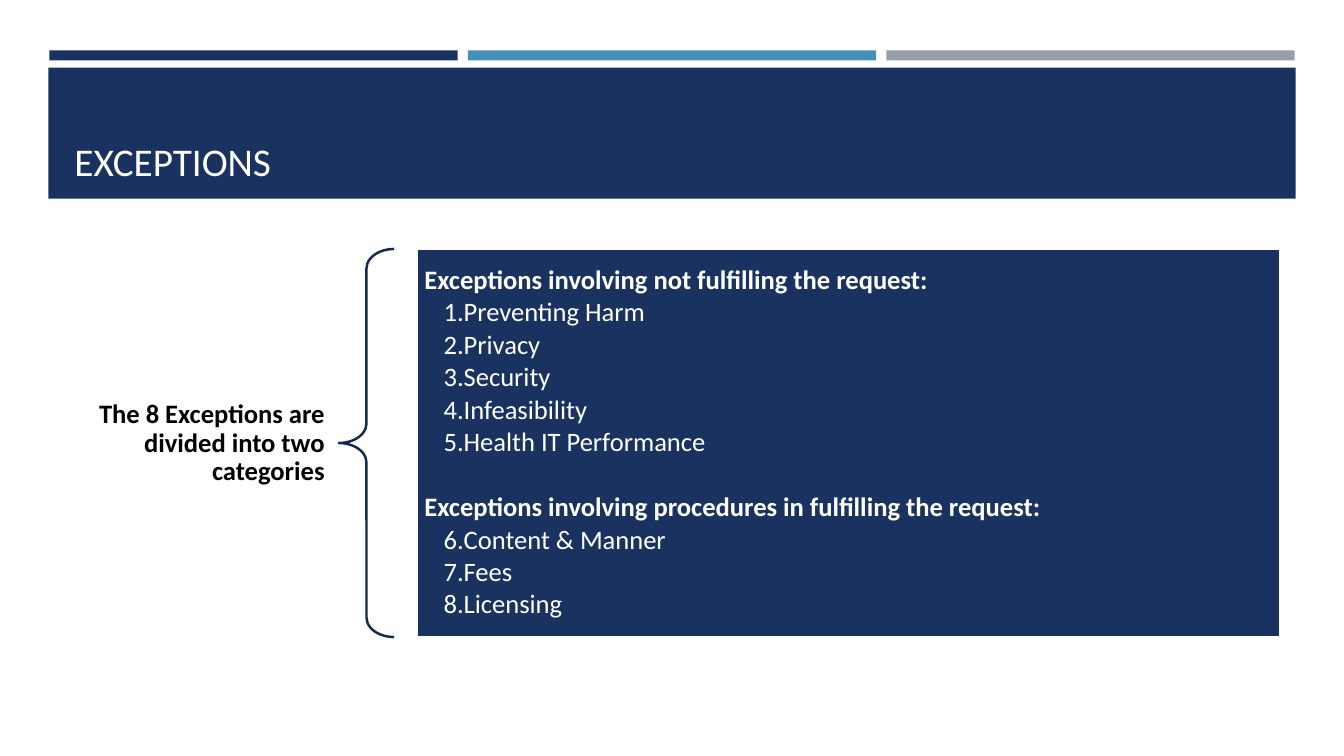
from lxml.etree import SubElement
from pptx import Presentation
from pptx.dml.color import RGBColor
from pptx.enum.shapes import MSO_SHAPE as Shape
from pptx.enum.text import MSO_ANCHOR as Anchor, PP_ALIGN as Align
from pptx.oxml.ns import qn
from pptx.util import Inches, Pt

NAVY, WHITE = "1A3260", "FFFFFF"
TITLE = "EXCEPTIONS"
LABEL = "The 8 Exceptions are divided into two categories"
GROUPS = [
    ("Exceptions involving not fulfilling the request:",
     ["Preventing Harm", "Privacy", "Security", "Infeasibility",
      "Health IT Performance"]),
    ("Exceptions involving procedures in fulfilling the request:",
     ["Content & Manner", "Fees", "Licensing"]),
]
BARS = [NAVY, "4590B8", "969FA7"]
TOP, HIGH = 2.47, 3.85

deck = Presentation()
deck.slide_width, deck.slide_height = Inches(13.33), Inches(7.5)
slide = deck.slides.add_slide(deck.slide_layouts[6])


def paint(hue):
    return RGBColor.from_string(hue)


def draw(kind, box, fill=None, line=None):
    shape = slide.shapes.add_shape(kind, *map(Inches, box))
    shape.shadow.inherit = False
    if fill:
        shape.fill.solid()
        shape.fill.fore_color.rgb = paint(fill)
    else:
        shape.fill.background()
    if line:
        shape.line.color.rgb = paint(line)
        shape.line.width = Pt(1.75)
    else:
        shape.line.fill.background()
    return shape


def setup(shape, anchor, side, edge):
    frame = shape.text_frame
    frame.word_wrap = True
    frame.vertical_anchor = anchor
    frame.margin_left = frame.margin_right = Inches(side)
    frame.margin_top = frame.margin_bottom = Inches(edge)
    return frame


def write(para, text, size, hue, bold=False, align=Align.LEFT):
    para.text = text
    para.alignment = align
    font = para.font
    font.name, font.size, font.bold = "Calibri", Pt(size), bold
    font.color.rgb = paint(hue)


def number(para, start):
    props = para._p.get_or_add_pPr()
    props.set("marL", str(Inches(0.38)))
    props.set("indent", str(Inches(-0.19)))
    SubElement(props, qn("a:buFont"), typeface="+mj-lt")
    SubElement(props, qn("a:buAutoNum"), type="arabicPeriod",
               startAt=str(start))


def add_box(box, anchor, side, edge):
    return setup(slide.shapes.add_textbox(*map(Inches, box)),
                 anchor, side, edge)


for i, hue in enumerate(BARS):
    draw(Shape.RECTANGLE, (0.49 + 4.15 * i, 0.5, 4.05, 0.1), hue)
draw(Shape.RECTANGLE, (0.48, 0.67, 12.37, 1.3), NAVY)

title = add_box((0.64, 0.77, 12.06, 1.11), Anchor.BOTTOM, 0.1, 0.05)
write(title.paragraphs[0], TITLE, 28, WHITE)

label = add_box((0.64, 3.91, 2.73, 0.98), Anchor.MIDDLE, 0.15, 0.05)
label.paragraphs[0].line_spacing = 0.9
write(label.paragraphs[0], LABEL, 19, "000000", True, Align.RIGHT)

brace = draw(Shape.LEFT_BRACE, (3.36, TOP, 0.55, HIGH), line="15284D")
brace.adjustments[0], brace.adjustments[1] = 0.35, 0.5

panel = draw(Shape.RECTANGLE, (4.13, TOP, 8.57, HIGH), NAVY, WHITE)
frame = setup(panel, Anchor.MIDDLE, 0.08, 0.08)
start = 1
for head, items in GROUPS:
    for i, text in enumerate([head] + items):
        first = start == 1 and i == 0
        para = frame.paragraphs[0] if first else frame.add_paragraph()
        para.line_spacing = 0.9
        para.space_before = Pt(23.4 if i == 0 and not first else 0)
        para.space_after = Pt(2.6)
        if i:
            number(para, start)
        write(para, text, 19, WHITE, bold=i == 0)
    start += len(items)

deck.save("out.pptx")
